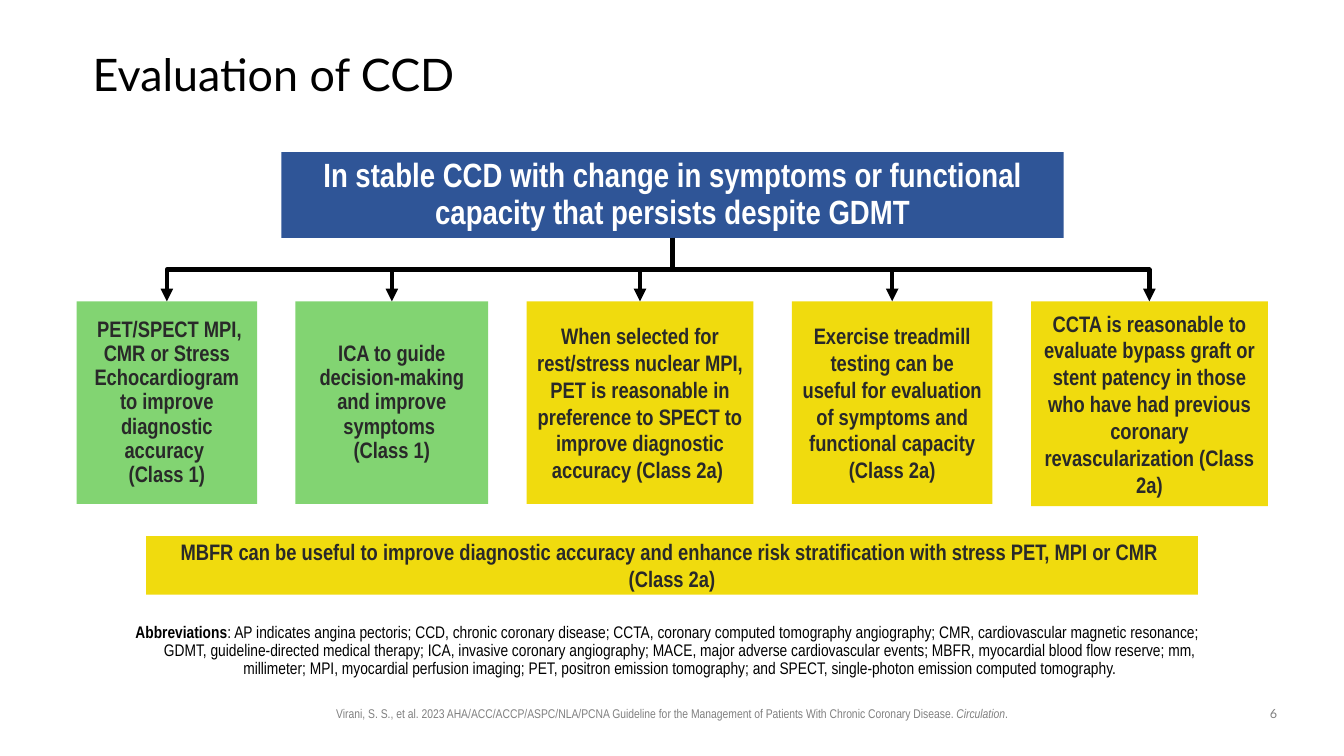
"""Build the slide on evaluating chronic coronary disease."""
from lxml.etree import SubElement
from pptx import Presentation
from pptx.dml.color import RGBColor
from pptx.enum.shapes import MSO_CONNECTOR, MSO_SHAPE
from pptx.enum.text import MSO_ANCHOR, MSO_AUTO_SIZE, PP_ALIGN
from pptx.oxml.ns import qn
from pptx.util import Inches, Pt

deck = Presentation()
deck.slide_width, deck.slide_height = Inches(13.33), Inches(7.5)
slide = deck.slides.add_slide(deck.slide_layouts[6])
col, row = deck.slide_width / 100, deck.slide_height / 100
NARROW, LATO = "Arial Narrow", "Lato"
BLACK, GRAY, DARK, WHITE = "000000", "808080", "292929", "FFFFFF"
GREEN, GOLD, BLUE = "82D472", "F0DB0E", "2F5597"


def hue(code):
    """Turn a hex string into a colour."""
    return RGBColor.from_string(code)


def box(place, text, size, ink, fill=None, face=NARROW, bold=False,
        space=1.0, align=PP_ALIGN.CENTER, anchor=MSO_ANCHOR.MIDDLE):
    """Add a text box or filled block, placed in percent of the slide."""
    x, y, w, h = place
    area = int(x * col), int(y * row), int(w * col), int(h * row)
    if fill:
        item = slide.shapes.add_shape(MSO_SHAPE.RECTANGLE, *area)
        item.shadow.inherit = False
        item.fill.solid()
        item.fill.fore_color.rgb = hue(fill)
        item.line.fill.background()
    else:
        item = slide.shapes.add_textbox(*area)
    frame = item.text_frame
    frame.word_wrap = True
    frame.vertical_anchor = anchor
    frame.text = text
    for para in frame.paragraphs:
        para.alignment = align
        para.line_spacing = space
        for run in para.runs:
            run.font.name, run.font.size, run.font.bold = face, Pt(size), bold
            run.font.color.rgb = hue(ink)
    return item


title = box((6.9, 5.33, 86.27, 9.6), "Evaluation of CCD", 32, BLACK,
            face=LATO, space=0.9, align=PP_ALIGN.LEFT)
head = box((20.93, 20.13, 58.21, 11.33),
           "In stable CCD with change in symptoms or functional capacity "
           "that persists despite GDMT", 24, WHITE, BLUE, bold=True, space=0.9)
for item in (title, head):
    frame = item.text_frame
    frame.margin_left = frame.margin_right = 0
    frame.margin_top = frame.margin_bottom = 0

cards = [
    (13.43, 26.8, GREEN, 0.9, " PET/SPECT MPI, CMR or Stress Echocardiogram "
     "to improve diagnostic accuracy \v(Class 1)"),
    (14.33, 26.8, GREEN, 0.9,
     "ICA to guide decision-making and improve symptoms \v(Class 1)"),
    (16.88, 26.8, GOLD, 1.0, "When selected for rest/stress nuclear MPI, PET is "
     "reasonable in preference to SPECT to improve diagnostic accuracy (Class 2a) "),
    (14.93, 26.8, GOLD, 1.0, "Exercise treadmill testing can be useful for "
     "evaluation of symptoms and functional capacity\n(Class 2a)"),
    (17.63, 27.07, GOLD, 1.0, "CCTA is reasonable to evaluate bypass graft or stent "
     "patency in those who have had previous coronary revascularization (Class 2a)"),
]
left, gap = 5.7, 2.86
start, base = head.left + head.width // 2, head.top + head.height
for wide, high, fill, space, text in cards:
    card = box((left, 39.87, wide, high), text, 16, DARK, fill,
               bold=True, space=space)
    left += wide + gap

    goal = card.left + card.width // 2
    link = slide.shapes.add_connector(MSO_CONNECTOR.ELBOW, start, base, goal, card.top)
    link.begin_connect(head, 2)
    link.end_connect(card, 0)
    drop, span = card.top - base, abs(goal - start)
    link.left = (start + goal - drop) // 2
    link.top = (base + card.top - span) // 2
    link.width, link.height = drop, span
    right = goal > start
    form = link._element.spPr.find(qn("a:xfrm"))
    form.set("rot", "16200000" if right else "5400000")
    form.set("flipH", "1" if right else "0")
    link.line.color.rgb = hue(BLACK)
    link.line.width = Pt(3)
    SubElement(link.line._get_or_add_ln(), qn("a:tailEnd"), type="triangle")
    SubElement(link._element.spPr, qn("a:effectLst"))

box((10.88, 70.93, 78.24, 7.73),
    "MBFR can be useful to improve diagnostic accuracy and enhance risk "
    "stratification with stress PET, MPI or CMR \n(Class 2a)",
    16, DARK, GOLD, bold=True)

terms = box((8.78, 81.87, 82.52, 7.07), "Abbreviations", 12, BLACK,
            bold=True, space=0.9, anchor=MSO_ANCHOR.TOP)
terms.text_frame.margin_left = 0
para = terms.text_frame.paragraphs[0]
dent = para._p.get_or_add_pPr()
dent.set("marL", str(Inches(0.25)))
dent.set("indent", str(-Inches(0.25)))

cite = box((22.06, 92.67, 55.89, 3.33),
           "Virani, S. S., et al. 2023 AHA/ACC/ACCP/ASPC/NLA/PCNA Guideline for the "
           "Management of Patients With Chronic Coronary Disease. ",
           9, GRAY, anchor=MSO_ANCHOR.TOP)
cite.text_frame.auto_size = MSO_AUTO_SIZE.SHAPE_TO_FIT_TEXT
tails = [
    (terms, ": AP indicates angina pectoris; CCD, chronic coronary disease; CCTA, "
     "coronary computed tomography angiography; CMR, cardiovascular magnetic "
     "resonance; GDMT, guideline-directed medical therapy; ICA, invasive coronary "
     "angiography; MACE, major adverse cardiovascular events; MBFR, myocardial blood "
     "flow reserve; mm, millimeter; MPI, myocardial perfusion imaging; PET, positron "
     "emission tomography; and SPECT, single-photon emission computed tomography.",
     12, BLACK, False),
    (cite, "Circulation", 9, GRAY, True),
    (cite, ".", 9, GRAY, False),
]
for item, text, size, ink, slant in tails:
    run = item.text_frame.paragraphs[0].add_run()
    run.text = text
    run.font.name, run.font.size, run.font.italic = NARROW, Pt(size), slant
    run.font.color.rgb = hue(ink)

box((93.17, 92.67, 3.15, 3.47), "6", 9, GRAY, face=LATO, anchor=MSO_ANCHOR.TOP)
deck.save("out.pptx")
